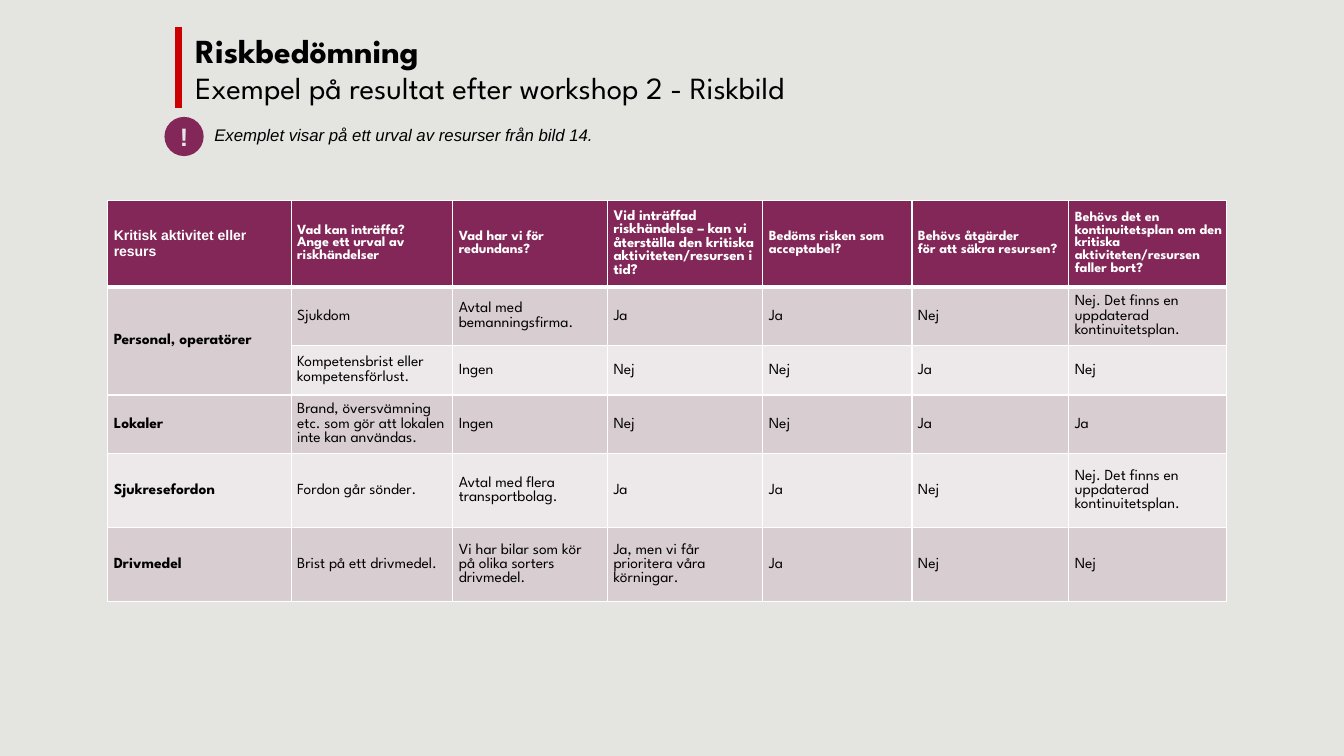
from lxml import etree
from pptx import Presentation
from pptx.dml.color import RGBColor
from pptx.enum.shapes import MSO_CONNECTOR, MSO_SHAPE
from pptx.enum.text import MSO_ANCHOR, PP_ALIGN
from pptx.oxml.ns import qn
from pptx.util import Pt

STRAIGHT = MSO_CONNECTOR.STRAIGHT
OVAL = MSO_SHAPE.OVAL
MIDDLE = MSO_ANCHOR.MIDDLE
TOP = MSO_ANCHOR.TOP
CENTER = PP_ALIGN.CENTER

BLACK = "000000"
WHITE = "FFFFFF"
PLUM = "822757"
BANDS = ("D8CDD1", "EDE8EA")

COLUMN_WIDTHS = (131, 115.5, 110.5, 111, 106.5, 112, 112.5)
ROW_HEIGHTS = (62, 41.5, 35.3, 41.5, 52.8, 52.8)
RISK_ROWS = (
    ("Kritisk aktivitet eller resurs",
     "Vad kan inträffa? \vAnge ett urval av riskhändelser",
     "Vad har vi för \vredundans?",
     "Vid inträffad riskhändelse – kan vi återställa den kritiska aktiviteten/resursen i tid?",
     "Bedöms risken som acceptabel?",
     "Behövs åtgärder\vför att säkra resursen?",
     "Behövs det en kontinuitetsplan om den kritiska aktiviteten/resursen \vfaller bort?"),
    ("Personal, operatörer", "Sjukdom", "Avtal med bemanningsfirma.", "Ja", "Ja", "Nej",
     "Nej. Det finns en uppdaterad kontinuitetsplan."),
    ("", "Kompetensbrist eller kompetensförlust.", "Ingen", "Nej", "Nej", "Ja", "Nej"),
    ("Lokaler", "Brand, översvämning etc. som gör att lokalen inte kan användas.",
     "Ingen", "Nej", "Nej", "Ja", "Ja"),
    ("Sjukresefordon", "Fordon går sönder.", "Avtal med flera transportbolag.",
     "Ja", "Ja", "Nej", "Nej. Det finns en uppdaterad kontinuitetsplan."),
    ("Drivmedel", "Brist på ett drivmedel.", "Vi har bilar som kör på olika sorters drivmedel.",
     "Ja, men vi får prioritera våra körningar.", "Ja", "Nej", "Nej"),
)


def color(value):
    return RGBColor.from_string(value)


class SlideBuilder:
    heading_font = "League Spartan"
    body_font = "Arial"

    def __init__(self, presentation):
        self.slide = presentation.slides.add_slide(presentation.slide_layouts[6])
        background = self.slide.background.fill
        background.solid()
        background.fore_color.rgb = color("E4E4E1")

    def style(self, font, name, size, fill, bold=False, italic=False):
        font.name = name
        font.size = Pt(size)
        font.bold = bold
        font.italic = italic
        font.color.rgb = color(fill)

    def text_box(self, left, top, width, height, anchor):
        shape = self.slide.shapes.add_textbox(Pt(left), Pt(top), Pt(width), Pt(height))
        frame = shape.text_frame
        frame.word_wrap = True
        frame.vertical_anchor = anchor
        return frame.paragraphs[0]

    def title(self, heading, subtitle, left, top, width, height):
        paragraph = self.text_box(left, top, width, height, MIDDLE)
        paragraph.line_spacing = Pt(25)
        heading_run = paragraph.add_run()
        heading_run.text = heading
        self.style(heading_run.font, self.heading_font, 24, BLACK, bold=True)
        paragraph.add_line_break()
        subtitle_run = paragraph.add_run()
        subtitle_run.text = subtitle
        self.style(subtitle_run.font, self.heading_font, 22, BLACK)

    def note(self, text, left, top, width, height):
        paragraph = self.text_box(left, top, width, height, TOP)
        paragraph.text = text
        self.style(paragraph.font, self.body_font, 12, BLACK, italic=True)

    def accent_line(self, left, top, bottom):
        connector = self.slide.shapes.add_connector(
            STRAIGHT, Pt(left), Pt(top), Pt(left), Pt(bottom))
        connector.line.color.rgb = color("CC0000")
        connector.line.width = Pt(5)
        etree.SubElement(connector._element.spPr, qn("a:effectLst"))

    def badge(self, text, left, top, diameter):
        shape = self.slide.shapes.add_shape(
            OVAL, Pt(left), Pt(top), Pt(diameter), Pt(diameter))
        shape.shadow.inherit = False
        shape.fill.solid()
        shape.fill.fore_color.rgb = color(PLUM)
        shape.line.fill.background()
        frame = shape.text_frame
        frame.margin_left = frame.margin_right = 0
        frame.margin_top = frame.margin_bottom = 0
        frame.vertical_anchor = MIDDLE
        paragraph = frame.paragraphs[0]
        paragraph.text = text
        paragraph.alignment = CENTER
        self.style(paragraph.font, self.body_font, 18, "E7E6E6", bold=True)

    def cell_borders(self, cell, widths):
        properties = cell._tc.get_or_add_tcPr()
        for side, width in widths.items():
            line = etree.SubElement(properties, qn(f"a:ln{side}"), w=str(Pt(width)))
            fill = etree.SubElement(line, qn("a:solidFill"))
            etree.SubElement(fill, qn("a:srgbClr"), val=WHITE)

    def table_cell(self, cell, text, row, column):
        header = row == 0
        self.cell_borders(cell, {"L": 1, "R": 1, "T": 3 if row == 1 else 1,
                                 "B": 3 if header else 1})
        cell.fill.solid()
        cell.fill.fore_color.rgb = color(PLUM if header else BANDS[(row - 1) % 2])
        cell.vertical_anchor = MIDDLE
        cell.margin_left = Pt(4.3)
        cell.margin_right = Pt(0 if header else 4.3)
        cell.margin_top = cell.margin_bottom = Pt(2.9 if header else 5.8)
        if not text:
            return
        paragraph = cell.text_frame.paragraphs[0]
        paragraph.text = text
        name = self.body_font if header and column == 0 else self.heading_font
        size = 11
        if header:
            size = 10.5 if column == 3 else 10
        self.style(paragraph.font, name, size, WHITE if header else BLACK,
                   bold=header or column == 0)

    def table(self, rows, left, top, widths, heights):
        table = self.slide.shapes.add_table(
            len(rows), len(widths), Pt(left), Pt(top),
            Pt(sum(widths)), Pt(sum(heights))).table
        table.horz_banding = False
        for table_column, width in zip(table.columns, widths):
            table_column.width = Pt(width)
        for table_row, height in zip(table.rows, heights):
            table_row.height = Pt(height)
        table.cell(1, 0).merge(table.cell(2, 0))
        for row, texts in enumerate(rows):
            for column, text in enumerate(texts):
                self.table_cell(table.cell(row, column), text, row, column)


def main():
    presentation = Presentation()
    presentation.slide_width = Pt(960)
    presentation.slide_height = Pt(540)
    builder = SlideBuilder(presentation)
    builder.table(RISK_ROWS, 77, 143, COLUMN_WIDTHS, ROW_HEIGHTS)
    builder.title("Riskbedömning ", "Exempel på resultat efter workshop 2 - Riskbild",
                  132.5, 21.6, 708, 57.6)
    builder.accent_line(127.5, 19.5, 77)
    builder.note("Exemplet visar på ett urval av resurser från bild 14.", 146, 85.7, 448, 21.8)
    builder.badge("!", 117.5, 83.5, 28)
    presentation.save("out.pptx")


if __name__ == "__main__":
    main()
